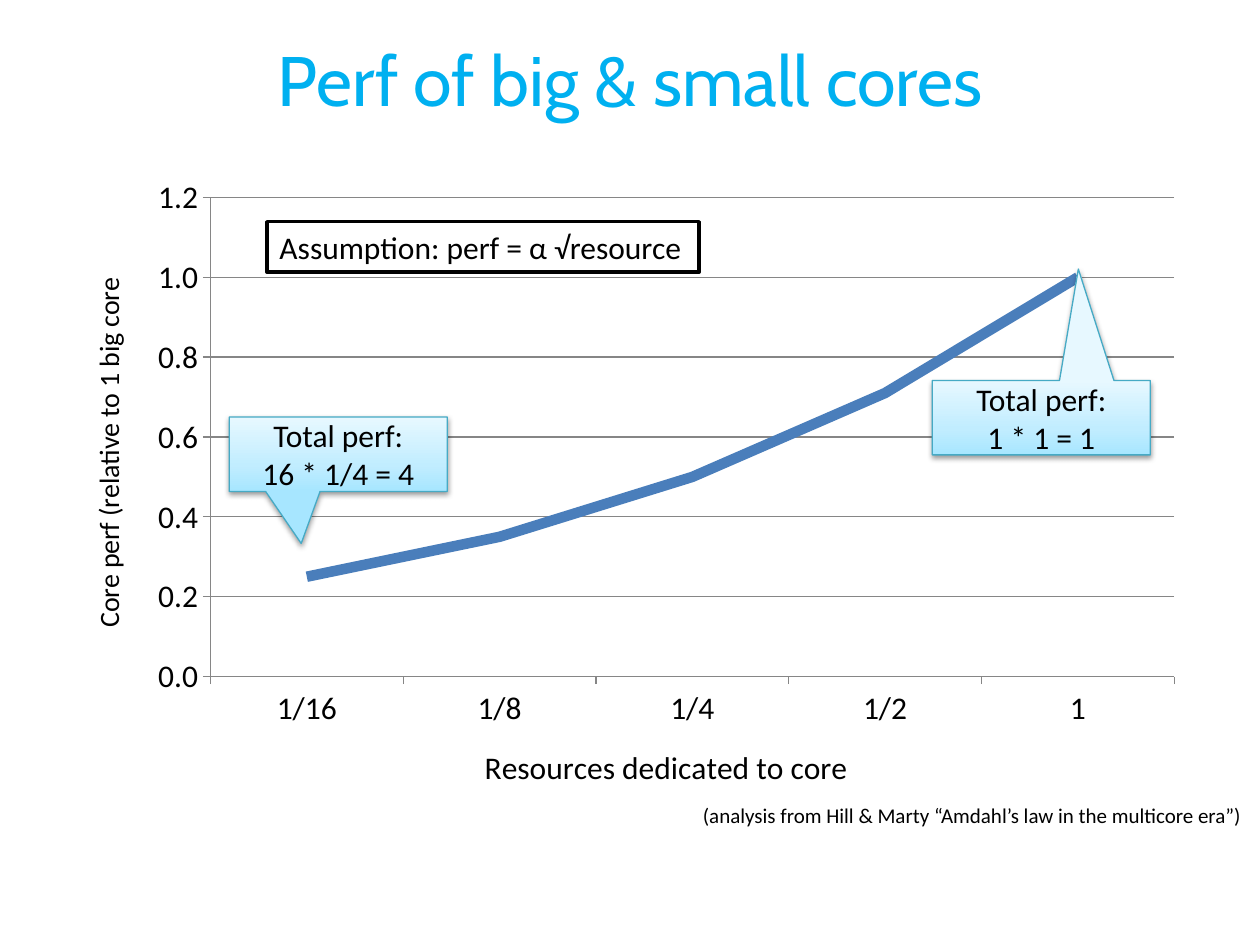
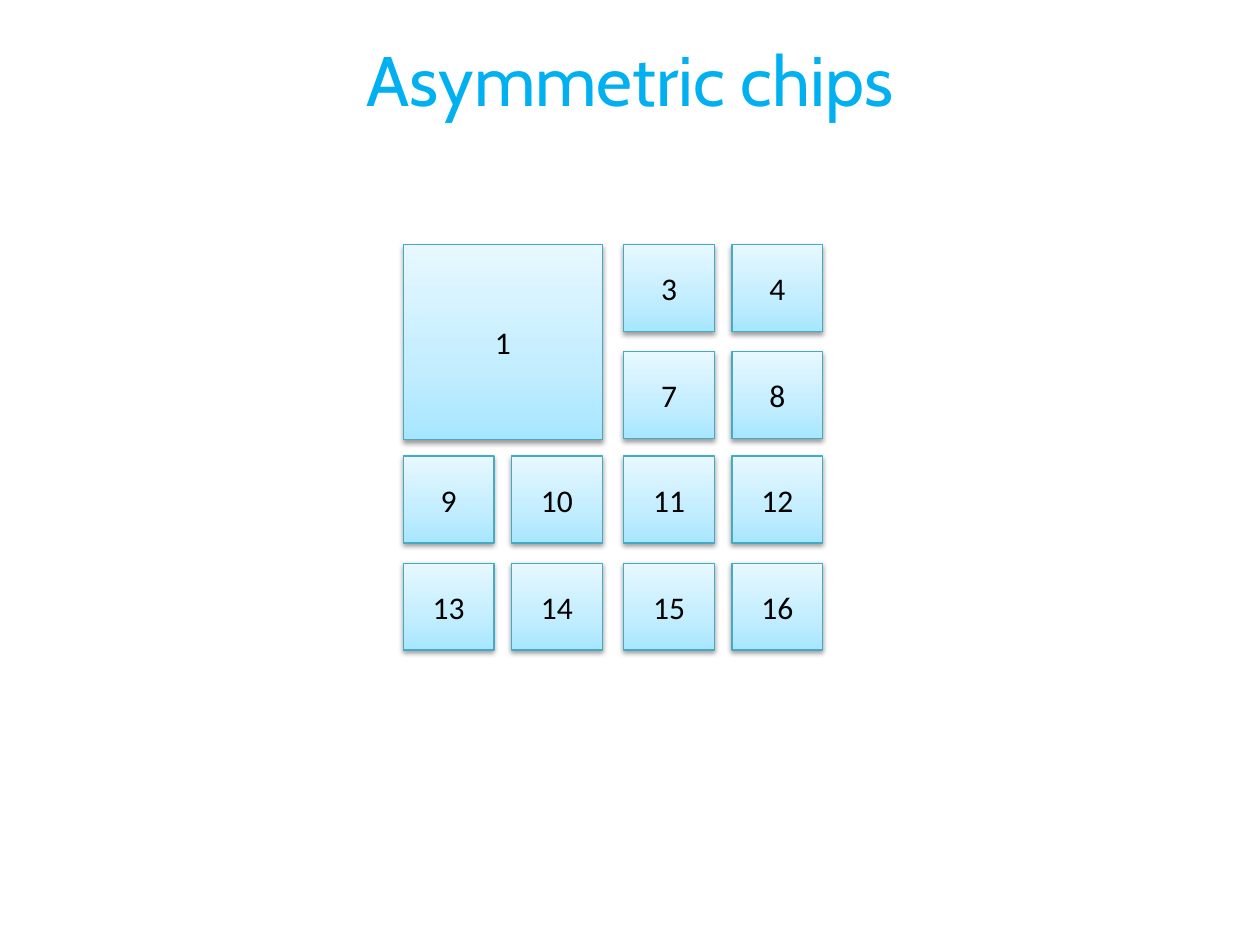
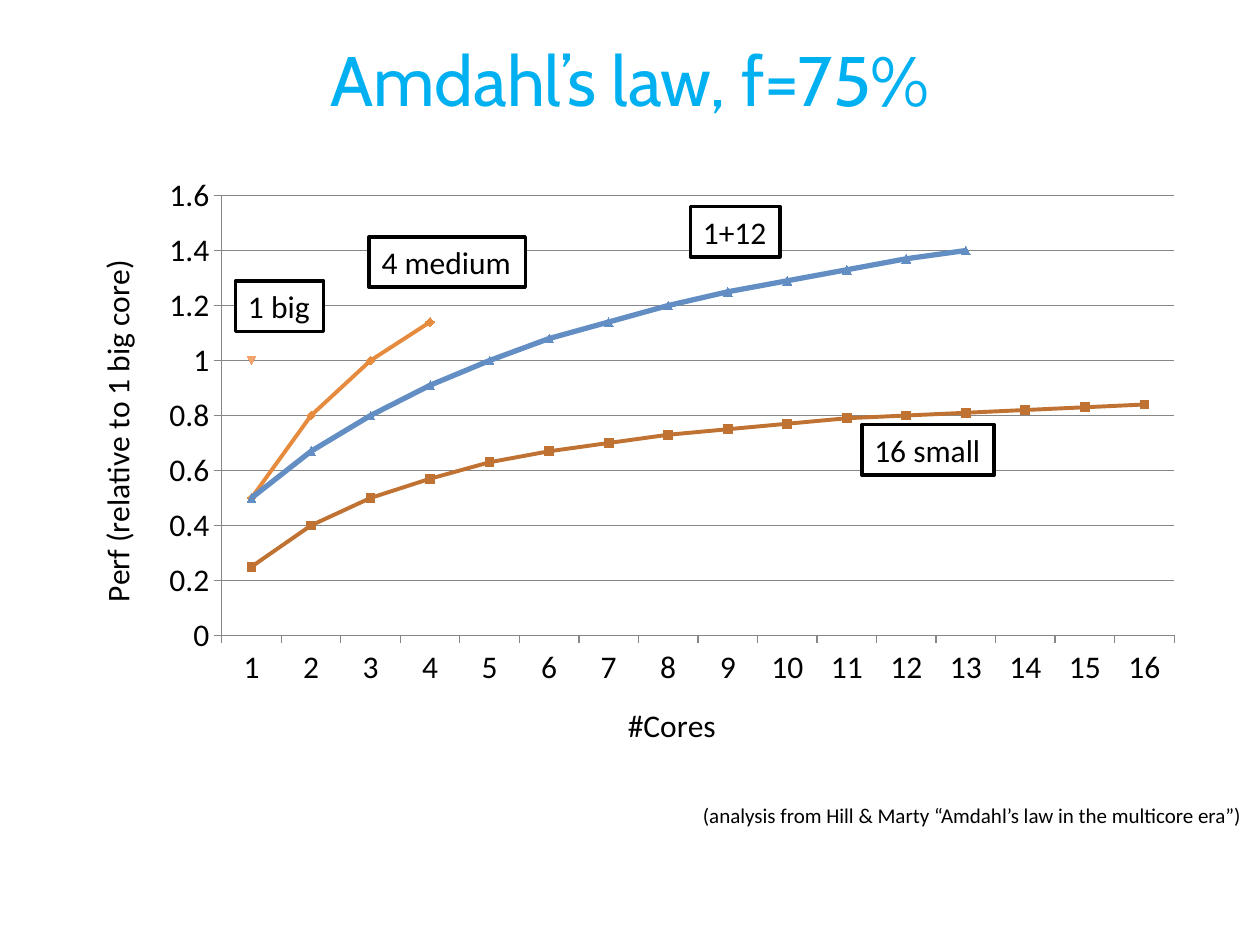
from lxml.etree import SubElement
from pptx import Presentation
from pptx.chart.data import CategoryChartData
from pptx.dml.color import RGBColor
from pptx.enum.chart import XL_CHART_TYPE as ChartType, XL_TICK_MARK as TickMark
from pptx.enum.shapes import MSO_SHAPE as Shape
from pptx.enum.text import MSO_ANCHOR as Anchor, MSO_AUTO_SIZE as AutoSize, PP_ALIGN as Align
from pptx.oxml.ns import qn
from pptx.util import Inches, Pt

COLORS = {
    "title": "00B0F0",
    "text": "000000",
    "label": "FFFFFF",
    "grid": "868686",
    "core_line": "46AAC5",
    "core_bottom": "A7E6FF",
    "core_middle": "C1EDFF",
    "core_top": "E7F8FF",
    "core_perf": "4A7EBB",
    "small": "C07233",
    "medium": "E68A3E",
    "big": "F2A36E",
    "asymmetric": "628EC4",
}
BODY = {"name": "Calibri", "size": Pt(18), "bold": False}
AXIS_SMALL = {**BODY, "size": Pt(16)}
CREDIT = {**BODY, "size": Pt(12)}
TITLE = {"name": "Cabin", "size": Pt(40), "bold": False}
CREDIT_TEXT = "(analysis from Hill & Marty “Amdahl’s law in the multicore era”)"


def color(name):
    return RGBColor.from_string(COLORS[name])


def format_font(font, values, color_name="text"):
    for attribute, value in values.items():
        setattr(font, attribute, value)
    font.color.rgb = color(color_name)


def write_text(text_frame, text, values, align, color_name="text"):
    paragraph = text_frame.paragraphs[0]
    paragraph.text = text
    paragraph.alignment = align
    for run in paragraph.runs:
        format_font(run.font, values, color_name)


def set_line(line, color_name, width):
    line.color.rgb = color(color_name)
    line.width = Pt(width)


def add_titled_slide(presentation, text):
    slide = presentation.slides.add_slide(presentation.slide_layouts[5])
    title = slide.shapes.title
    title.left, title.top = Inches(0), Inches(0)
    title.width, title.height = Inches(10), Inches(1.25)
    title.text_frame.vertical_anchor = Anchor.MIDDLE
    write_text(title.text_frame, text, TITLE, Align.CENTER, "title")
    return slide


def add_text(slide, text, box, values=BODY):
    shape = slide.shapes.add_textbox(*map(Inches, box))
    shape.text_frame.word_wrap = False
    shape.text_frame.auto_size = AutoSize.SHAPE_TO_FIT_TEXT
    write_text(shape.text_frame, text, values, Align.LEFT)
    return shape


def add_label(slide, text, left, top, width):
    shape = add_text(slide, text, (left, top, width, 0.4))
    shape.fill.solid()
    shape.fill.fore_color.rgb = color("label")
    set_line(shape.line, "text", 2)


def add_credit(slide):
    add_text(slide, CREDIT_TEXT, (5.48, 6.32, 4.52, 0.3), CREDIT)


def fill_gradient(shape):
    shape.fill.gradient()
    shape.fill.gradient_angle = 90
    stops = shape.fill.gradient_stops
    for stop, position, name in zip(stops, (0, 1), ("core_bottom", "core_top")):
        stop.position = position
        stop.color.rgb = color(name)
    stop_list = next(shape._element.spPr.iter(qn("a:gsLst")))
    middle = SubElement(stop_list, qn("a:gs"), pos="35000")
    SubElement(middle, qn("a:srgbClr"), val=COLORS["core_middle"])
    stop_list.insert(1, middle)


def add_shadow(shape):
    shape.shadow.inherit = False
    effects = shape._element.spPr.find(qn("a:effectLst"))
    shadow = SubElement(effects, qn("a:outerShdw"), blurRad=str(Pt(3.1)),
                        dist=str(Pt(1.6)), dir="5400000", rotWithShape="0")
    shade = SubElement(shadow, qn("a:srgbClr"), val=COLORS["text"])
    SubElement(shade, qn("a:alpha"), val="38000")


def add_core(shapes, kind, text, box):
    shape = shapes.add_shape(kind, *map(Inches, box))
    fill_gradient(shape)
    set_line(shape.line, "core_line", 0.75)
    add_shadow(shape)
    shape.text_frame.word_wrap = True
    shape.text_frame.vertical_anchor = Anchor.MIDDLE
    write_text(shape.text_frame, text, BODY, Align.CENTER)
    return shape


def add_callout(slide, text, left, top, pointer):
    shape = add_core(slide.shapes, Shape.RECTANGULAR_CALLOUT, text, (left, top, 1.73, 0.59))
    for index, value in enumerate(pointer):
        shape.adjustments[index] = value


def format_axis(axis, title, values):
    axis.major_tick_mark = TickMark.OUTSIDE
    axis.minor_tick_mark = TickMark.NONE
    set_line(axis.format.line, "grid", 0.75)
    format_font(axis.tick_labels.font, BODY)
    write_text(axis.axis_title.text_frame, title, values, Align.CENTER)


def set_plot_layout(chart, fractions):
    plot_area = chart._chartSpace.chart.plotArea
    layout = plot_area.find(qn("c:layout"))
    if layout is None:
        layout = SubElement(plot_area, qn("c:layout"))
        plot_area.insert(0, layout)
    manual = SubElement(layout, qn("c:manualLayout"))
    SubElement(manual, qn("c:layoutTarget"), val="inner")
    for side in ("xMode", "yMode"):
        SubElement(manual, qn(f"c:{side}"), val="edge")
    for side, value in zip("xywh", fractions):
        SubElement(manual, qn(f"c:{side}"), val=str(value))


def add_line_chart(slide, kind, height, categories, series_list, titles, maximum,
                   number_format, plot_fractions, value_title_font=BODY):
    data = CategoryChartData()
    data.categories = categories
    for number, (values, _, _) in enumerate(series_list, 1):
        padding = [None] * (len(categories) - len(values))
        data.add_series(f"Series {number}", list(values) + padding)
    box = map(Inches, (0.5, 1.31, 9, height))
    chart = slide.shapes.add_chart(kind, *box, data).chart
    chart.has_legend = chart.has_title = False
    format_font(chart.font, BODY)
    chart.plots[0].vary_by_categories = False
    for series, (_, color_name, width) in zip(chart.plots[0].series, series_list):
        series.smooth = False
        set_line(series.format.line, color_name, width)
        if kind == ChartType.LINE_MARKERS:
            series.marker.size = 5
            series.marker.format.fill.solid()
            series.marker.format.fill.fore_color.rgb = color(color_name)
    format_axis(chart.category_axis, titles[0], BODY)
    value_axis = chart.value_axis
    format_axis(value_axis, titles[1], value_title_font)
    body = value_axis.axis_title.text_frame._element.find(qn("a:bodyPr"))
    body.set("rot", "-5400000")
    body.set("vert", "horz")
    value_axis.minimum_scale, value_axis.maximum_scale = 0, maximum
    value_axis.major_unit = 0.2
    value_axis.tick_labels.number_format = number_format
    value_axis.tick_labels.number_format_is_linked = False
    value_axis.has_major_gridlines = True
    set_line(value_axis.major_gridlines.format.line, "grid", 0.75)
    set_plot_layout(chart, plot_fractions)


def build_core_perf(presentation):
    slide = add_titled_slide(presentation, "Perf of big & small cores")
    add_line_chart(
        slide, ChartType.LINE, 5.14, ["1/16", "1/8", "1/4", "1/2", "1"],
        [((0.25, 0.35, 0.5, 0.71, 1), "core_perf", 6)],
        ("Resources dedicated to core", "Core perf (relative to 1 big core"),
        1.2, "#,##0.0", (0.13, 0.05, 0.85, 0.74), AXIS_SMALL)
    add_label(slide, "Assumption: perf = α √resource", 2.12, 1.76, 3.43)
    add_callout(slide, "Total perf:\n16 * 1/4 = 4", 1.82, 3.31, (-0.17, 1.2))
    add_callout(slide, "Total perf:\n1 * 1 = 1", 7.4, 3.02, (0.17, -2))
    add_credit(slide)


def build_chip(presentation):
    slide = add_titled_slide(presentation, "Asymmetric chips")
    chip = slide.shapes.add_group_shape().shapes
    left, top = 3.2, 1.94
    add_core(chip, Shape.RECTANGLE, "1", (left, top, 1.58, 1.55))
    for index in range(16):
        row, column = divmod(index, 4)
        if row < 2 and column < 2:
            continue
        core_left = left + 1.75 * (column // 2) + 0.86 * (column % 2)
        core_top = top + 1.68 * (row // 2) + 0.85 * (row % 2)
        add_core(chip, Shape.RECTANGLE, str(index + 1), (core_left, core_top, 0.72, 0.69))


def build_amdahl(presentation):
    slide = add_titled_slide(presentation, "Amdahl’s law, f=75%")
    small = (0.25, 0.4, 0.5, 0.57, 0.63, 0.67, 0.7, 0.73,
             0.75, 0.77, 0.79, 0.8, 0.81, 0.82, 0.83, 0.84)
    medium = (0.5, 0.8, 1, 1.14)
    asymmetric = (0.5, 0.67, 0.8, 0.91, 1, 1.08, 1.14, 1.2, 1.25, 1.29, 1.33, 1.37, 1.4)
    add_line_chart(
        slide, ChartType.LINE_MARKERS, 4.85, [str(count) for count in range(1, 17)],
        [(small, "small", 2.25), (medium, "medium", 2.25), ((1,), "big", 2.25),
         (asymmetric, "asymmetric", 3)],
        ("#Cores", "Perf (relative to 1 big core)"),
        1.6, "General", (0.14, 0.05, 0.84, 0.72))
    for label in (("1 big", 1.87, 2.23, 0.7), ("4 medium", 2.93, 1.88, 1.24),
                  ("16 small", 6.84, 3.37, 1.05), ("1+12", 5.48, 1.64, 0.71)):
        add_label(slide, *label)
    add_credit(slide)


def main():
    presentation = Presentation()
    presentation.slide_width, presentation.slide_height = Inches(10), Inches(7.5)
    build_core_perf(presentation)
    build_chip(presentation)
    build_amdahl(presentation)
    presentation.save("out.pptx")


if __name__ == "__main__":
    main()
